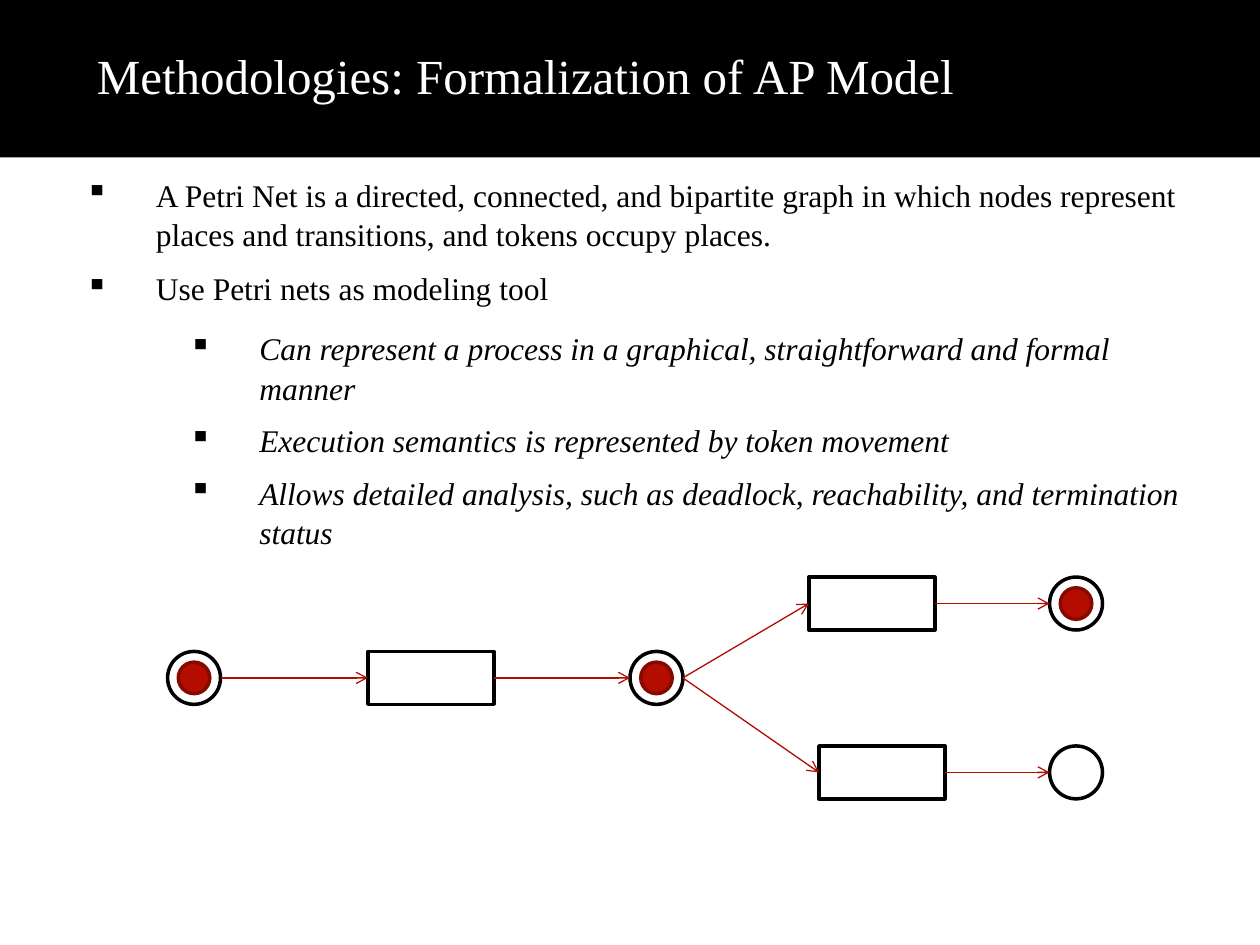
"""Build a slide on formalizing a process model with a Petri net."""
from lxml import etree
from pptx import Presentation
from pptx import util as u
from pptx.dml.color import RGBColor
from pptx.enum import shapes, text
from pptx.oxml.ns import qn

BLACK = RGBColor(0x00, 0x00, 0x00)
WHITE = RGBColor(0xFF, 0xFF, 0xFF)
ARROW = RGBColor(0xB1, 0x0C, 0x00)
TOKEN = RGBColor(0xB5, 0x0C, 0x00)
TOKEN_EDGE = RGBColor(0x86, 0x09, 0x00)
FONT = "Times New Roman"

TITLE = "Methodologies: Formalization of AP Model"
BULLETS = [
    (0, "A Petri Net is a directed, connected, and bipartite graph in which nodes "
        "represent places and transitions, and tokens occupy places."),
    (0, "Use Petri nets as modeling tool"),
    (1, "Can represent a process in a graphical, straightforward and formal manner"),
    (1, "Execution semantics is represented by token movement"),
    (1, "Allows detailed analysis, such as deadlock, reachability, and termination status"),
]
LEVELS = [
    {"indent": 0.56, "italic": False, "before": 3.6, "after": 4.5},
    {"indent": 1.38, "italic": True, "before": 7.2, "after": 0},
]
ROWS = {"upper": 4.79, "middle": 5.38, "lower": 6.13}
NODES = {
    "start": ("place", 1.33, "middle", True),
    "first step": ("transition", 2.92, "middle", False),
    "choice": ("place", 5, "middle", True),
    "upper step": ("transition", 6.42, "upper", False),
    "upper end": ("place", 8.33, "upper", True),
    "lower step": ("transition", 6.5, "lower", False),
    "lower end": ("place", 8.33, "lower", False),
}
ARCS = [
    ("start", "first step"), ("first step", "choice"),
    ("choice", "upper step"), ("upper step", "upper end"),
    ("choice", "lower step"), ("lower step", "lower end"),
]
OVAL, RECTANGLE = shapes.MSO_SHAPE.OVAL, shapes.MSO_SHAPE.RECTANGLE
KINDS = {"place": (OVAL, 0.42), "transition": (RECTANGLE, 1)}
NODE_HEIGHT, TOKEN_SIZE = 0.42, 0.25


def apply(target, values):
    for name, value in values.items():
        setattr(target, name, value)


def add_filled(page, kind, frame, fill, edge=None):
    shape = page.shapes.add_shape(kind, *map(u.Inches, frame))
    shape.shadow.inherit = False
    shape.fill.solid()
    shape.fill.fore_color.rgb = fill
    if edge is None:
        shape.line.fill.background()
    else:
        shape.line.color.rgb = edge
        shape.line.width = u.Pt(2)


def add_text_frame(page, frame, anchor):
    box = page.shapes.add_textbox(*map(u.Inches, frame))
    apply(box.text_frame, {"word_wrap": True, "vertical_anchor": anchor})
    return box.text_frame


def add_span(para, words, size, color, italic=False):
    span = para.add_run()
    span.text = words
    apply(span.font, {"name": FONT, "size": u.Pt(size), "italic": italic})
    span.font.color.rgb = color


def add_bullets(page):
    frame = add_text_frame(page, (0.58, 1.33, 9.04, 5.95), text.MSO_ANCHOR.TOP)
    for index, (level, words) in enumerate(BULLETS):
        look = LEVELS[level]
        para = frame.add_paragraph() if index else frame.paragraphs[0]
        properties = para._p.get_or_add_pPr()
        properties.set("marL", str(u.Inches(look["indent"])))
        properties.set("indent", str(u.Inches(-0.56)))
        etree.SubElement(properties, qn("a:buChar")).set("char", "▪")
        apply(para, {"level": level, "line_spacing": 1.05,
                     "space_before": u.Pt(look["before"] if index else 0),
                     "space_after": u.Pt(look["after"])})
        add_span(para, words, 18, BLACK, look["italic"])


def add_node(page, kind, left, row, has_token):
    preset, width = KINDS[kind]
    middle = ROWS[row]
    add_filled(page, preset, (left, middle - NODE_HEIGHT / 2, width, NODE_HEIGHT),
               WHITE, BLACK)
    if has_token:
        add_filled(page, OVAL, (left + (width - TOKEN_SIZE) / 2, middle - TOKEN_SIZE / 2,
                                TOKEN_SIZE, TOKEN_SIZE), TOKEN, TOKEN_EDGE)


def add_arc(page, source, target):
    kind, left, row, _ = NODES[source]
    _, end, end_row, _ = NODES[target]
    points = (left + KINDS[kind][1], ROWS[row], end, ROWS[end_row])
    arc = page.shapes.add_connector(shapes.MSO_CONNECTOR.STRAIGHT, *map(u.Inches, points))
    arc.line.color.rgb = ARROW
    arc.line.width = u.Pt(0.75)
    etree.SubElement(arc.line._get_or_add_ln(), qn("a:tailEnd")).set("type", "arrow")
    etree.SubElement(arc._element.spPr, qn("a:effectLst"))


def main():
    deck = Presentation()
    apply(deck, {"slide_width": u.Inches(10), "slide_height": u.Inches(7.5)})
    page = deck.slides.add_slide(deck.slide_layouts[6])
    add_filled(page, RECTANGLE, (0, 0, 10, 1.25), BLACK)
    title = add_text_frame(page, (0.67, -0.03, 8.22, 1.25), text.MSO_ANCHOR.MIDDLE)
    add_span(title.paragraphs[0], TITLE, 28, WHITE)
    add_bullets(page)
    for node in NODES.values():
        add_node(page, *node)
    for arc in ARCS:
        add_arc(page, *arc)
    deck.save("out.pptx")


if __name__ == "__main__":
    main()
